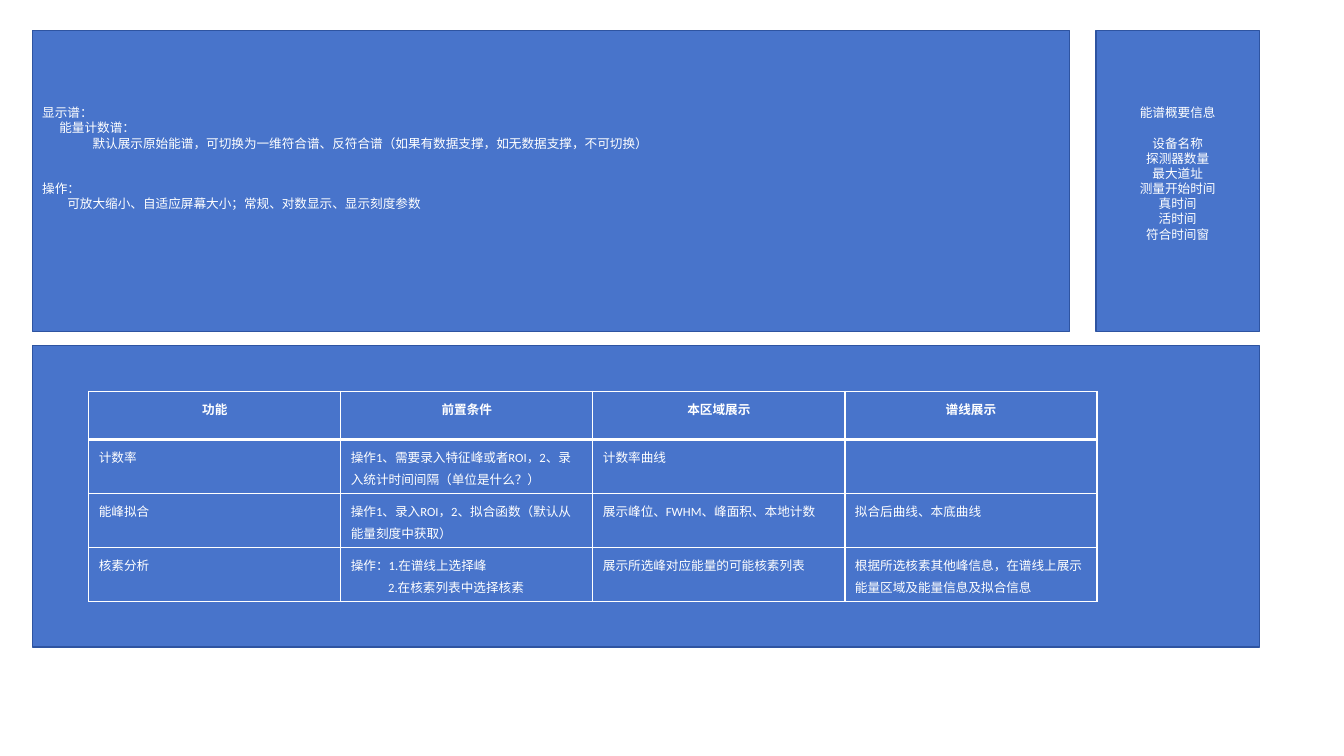
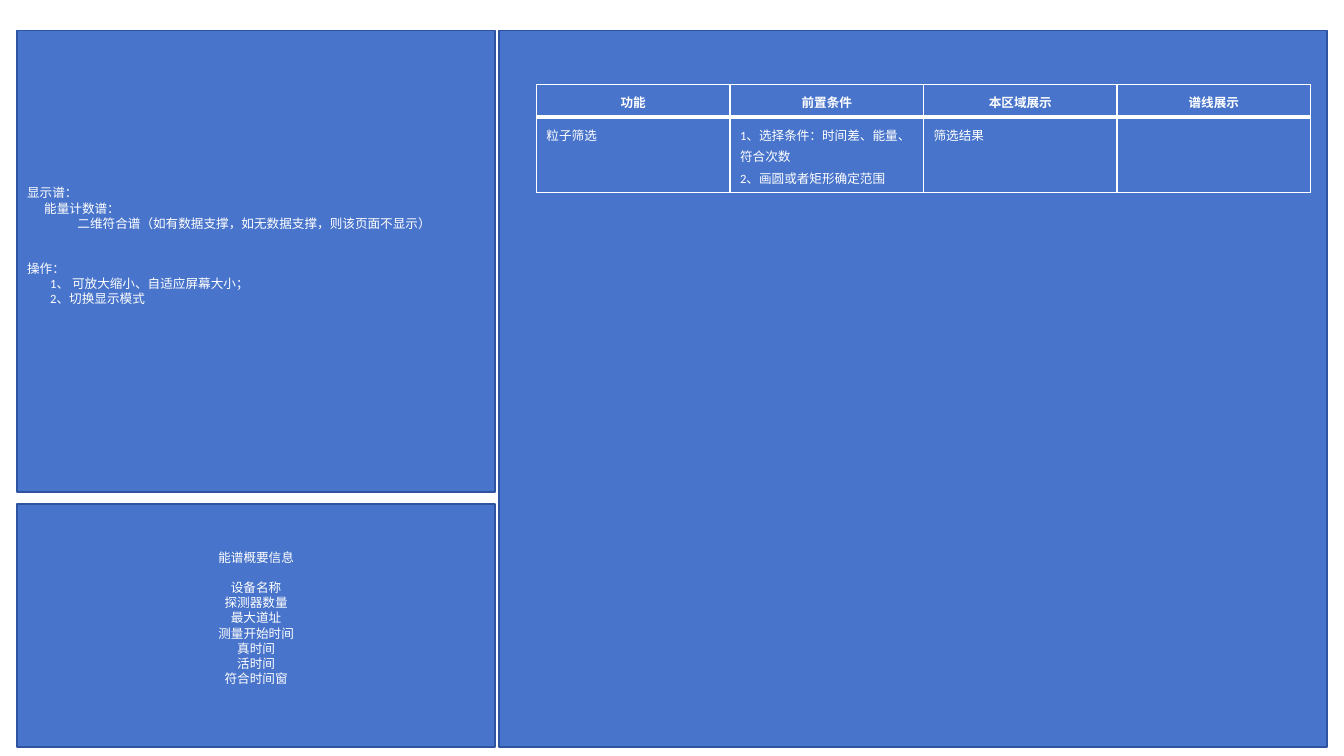
from lxml import etree
from pptx import Presentation
from pptx import util as u
from pptx.dml.color import RGBColor
from pptx.enum import shapes, text
from pptx.oxml.ns import qn

BLUE, NAVY, WHITE = "4874CB", "2E54A1", "FFFFFF"
FONT, SIZE = "Calibri", 9
LINE_STEP = 0.15
BLANK_LINE = 10.8
HEADERS = ["功能", "前置条件", "本区域展示", "谱线展示"]
SUMMARY = [("能谱概要信息", 0, 0), ("设备名称", 0, 1)] + [
    (label, 0, 0)
    for label in ("探测器数量", "最大道址", "测量开始时间", "真时间", "活时间", "符合时间窗")
]


def colour(value):
    return RGBColor.from_string(value)


def format_para(para, indent=0, bold=False, align=text.PP_ALIGN.LEFT):
    para.alignment = align
    if indent:
        para._p.get_or_add_pPr().set("marL", str(u.Inches(indent)))
    for span in para.runs:
        span.font.name = FONT
        span.font.size = u.Pt(SIZE)
        span.font.bold = bold
        span.font.color.rgb = colour(WHITE)


def add_panel(page, left, top, width, height, lines=(), align=text.PP_ALIGN.LEFT, lines_below=0):
    box = page.shapes.add_shape(
        shapes.MSO_SHAPE.RECTANGLE, *map(u.Inches, (left, top, width, height)))
    box.shadow.inherit = False
    box.fill.solid()
    box.fill.fore_color.rgb = colour(BLUE)
    box.line.color.rgb = colour(NAVY)
    box.line.width = u.Pt(1)
    frame = box.text_frame
    frame.word_wrap = True
    frame.vertical_anchor = text.MSO_ANCHOR.MIDDLE
    frame.margin_bottom = u.Inches(0.05 + lines_below * LINE_STEP)
    frame.text = "\n".join(line for line, _, _ in lines)
    for para, (_, indent, gap) in zip(frame.paragraphs, lines):
        format_para(para, indent, align=align)
        para.space_before = u.Pt(gap * BLANK_LINE)


def add_border(cell, side, points):
    border = etree.SubElement(cell._tc.get_or_add_tcPr(), qn("a:" + side), w=str(u.Pt(points)))
    fill = etree.SubElement(border, qn("a:solidFill"))
    etree.SubElement(fill, qn("a:srgbClr"), val=WHITE)


def fill_cell(cell, content, row, second_indent):
    header = row == 0
    widths = {"lnL": 1, "lnR": 1, "lnT": 3 if row == 1 else 1, "lnB": 3 if header else 1}
    for side, points in widths.items():
        add_border(cell, side, points)
    cell.fill.solid()
    cell.fill.fore_color.rgb = colour(BLUE)
    cell.text_frame.text = content
    for index, para in enumerate(cell.text_frame.paragraphs):
        align = text.PP_ALIGN.CENTER if header else text.PP_ALIGN.LEFT
        format_para(para, second_indent if index else 0, header, align)
        para.line_spacing = 1.2


def add_function_table(page, left, top, column_width, row_heights, records, second_indent=0):
    rows = [HEADERS] + records
    table = page.shapes.add_table(
        len(rows), len(HEADERS), u.Inches(left), u.Inches(top),
        u.Inches(column_width * len(HEADERS)), u.Inches(sum(row_heights))).table
    table.horz_banding = False
    for column in table.columns:
        column.width = u.Inches(column_width)
    for row, (height, contents) in enumerate(zip(row_heights, rows)):
        table.rows[row].height = u.Inches(height)
        for column, content in enumerate(contents):
            fill_cell(table.cell(row, column), content, row, second_indent)


def build_energy_page(page):
    add_panel(page, 0.32, 0.3, 10.29, 2.99, [
        ("显示谱：", 0, 0),
        ("能量计数谱：", 0.17, 0),
        ("默认展示原始能谱，可切换为一维符合谱、反符合谱（如果有数据支撑，如无数据支撑，不可切换）", 0.5, 0),
        ("操作：", 0, 2),
        ("可放大缩小、自适应屏幕大小；常规、对数显示、显示刻度参数", 0.25, 0),
    ], lines_below=3)
    add_panel(page, 10.87, 0.3, 1.62, 2.99, SUMMARY, text.PP_ALIGN.CENTER, 1)
    add_panel(page, 0.32, 3.43, 12.17, 2.99)
    add_function_table(page, 0.88, 3.88, 2.5, [0.48] * 4, [
        ["计数率", "操作1、需要录入特征峰或者ROI，2、录入统计时间间隔（单位是什么？）", "计数率曲线", ""],
        ["能峰拟合", "操作1、录入ROI，2、拟合函数（默认从能量刻度中获取）",
         "展示峰位、FWHM、峰面积、本地计数", "拟合后曲线、本底曲线"],
        ["核素分析", "操作：1.在谱线上选择峰\n2.在核素列表中选择核素",
         "展示所选峰对应能量的可能核素列表",
         "根据所选核素其他峰信息，在谱线上展示能量区域及能量信息及拟合信息"],
    ], second_indent=0.37)


def build_coincidence_page(page):
    add_panel(page, 0.17, 0.3, 4.74, 4.58, [
        ("显示谱：", 0, 0),
        ("能量计数谱：", 0.17, 0),
        ("二维符合谱（如有数据支撑，如无数据支撑，则该页面不显示）", 0.5, 0),
        ("操作：", 0, 2),
        ("1、 可放大缩小、自适应屏幕大小；", 0.23, 0),
        ("2、切换显示模式", 0.23, 0),
    ], lines_below=2)
    add_panel(page, 0.17, 5, 4.74, 2.41, SUMMARY, text.PP_ALIGN.CENTER, 1)
    add_panel(page, 4.95, 0.3, 8.21, 7.11)
    add_function_table(page, 5.32, 0.84, 1.92, [0.29, 0.65], [
        ["粒子筛选", "1、选择条件：时间差、能量、符合次数\n2、画圆或者矩形确定范围", "筛选结果", ""],
    ])


def main():
    deck = Presentation()
    deck.slide_width, deck.slide_height = u.Inches(13.33), u.Inches(7.5)
    for build in (build_energy_page, build_coincidence_page):
        build(deck.slides.add_slide(deck.slide_layouts[6]))
    deck.save("out.pptx")


if __name__ == "__main__":
    main()
